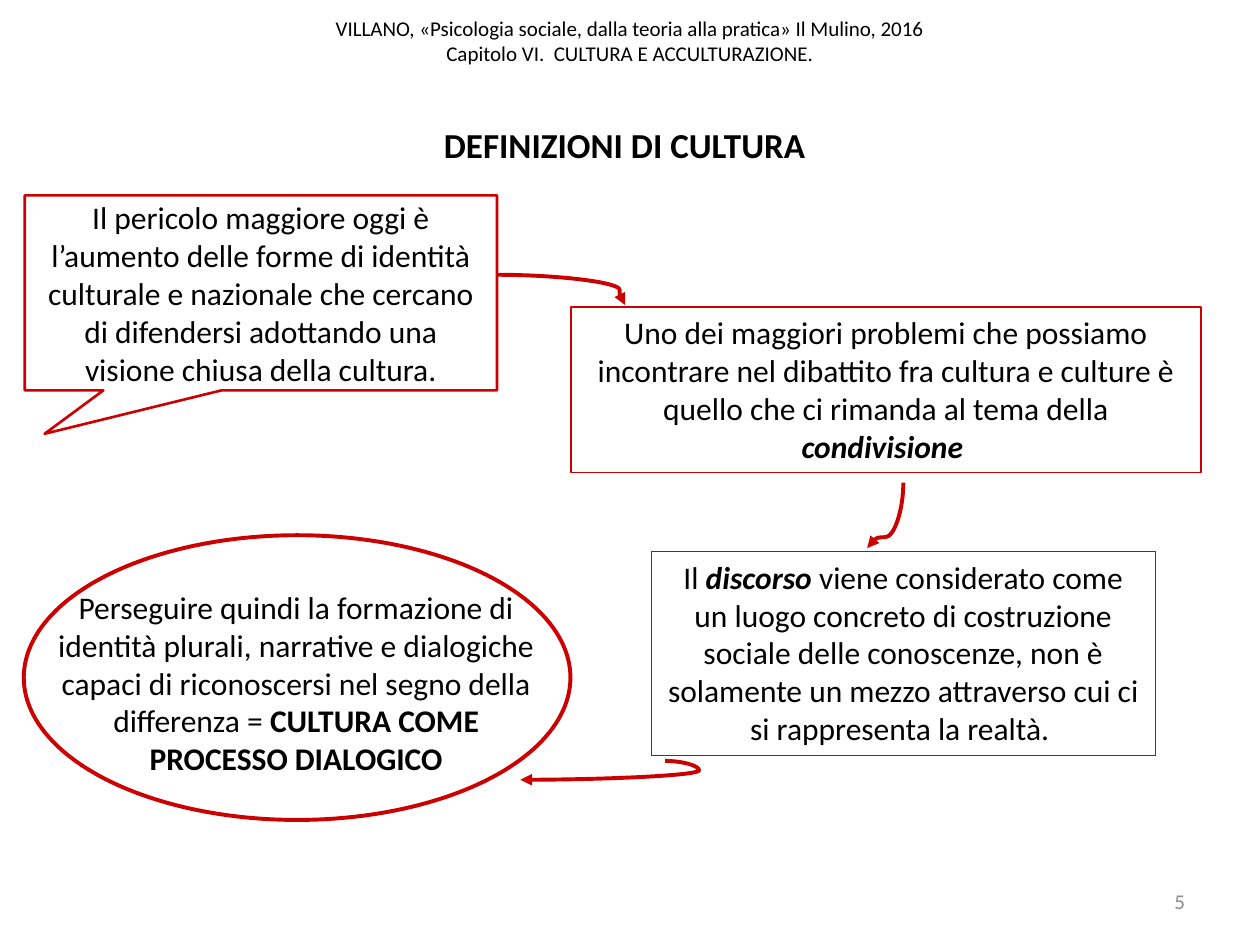
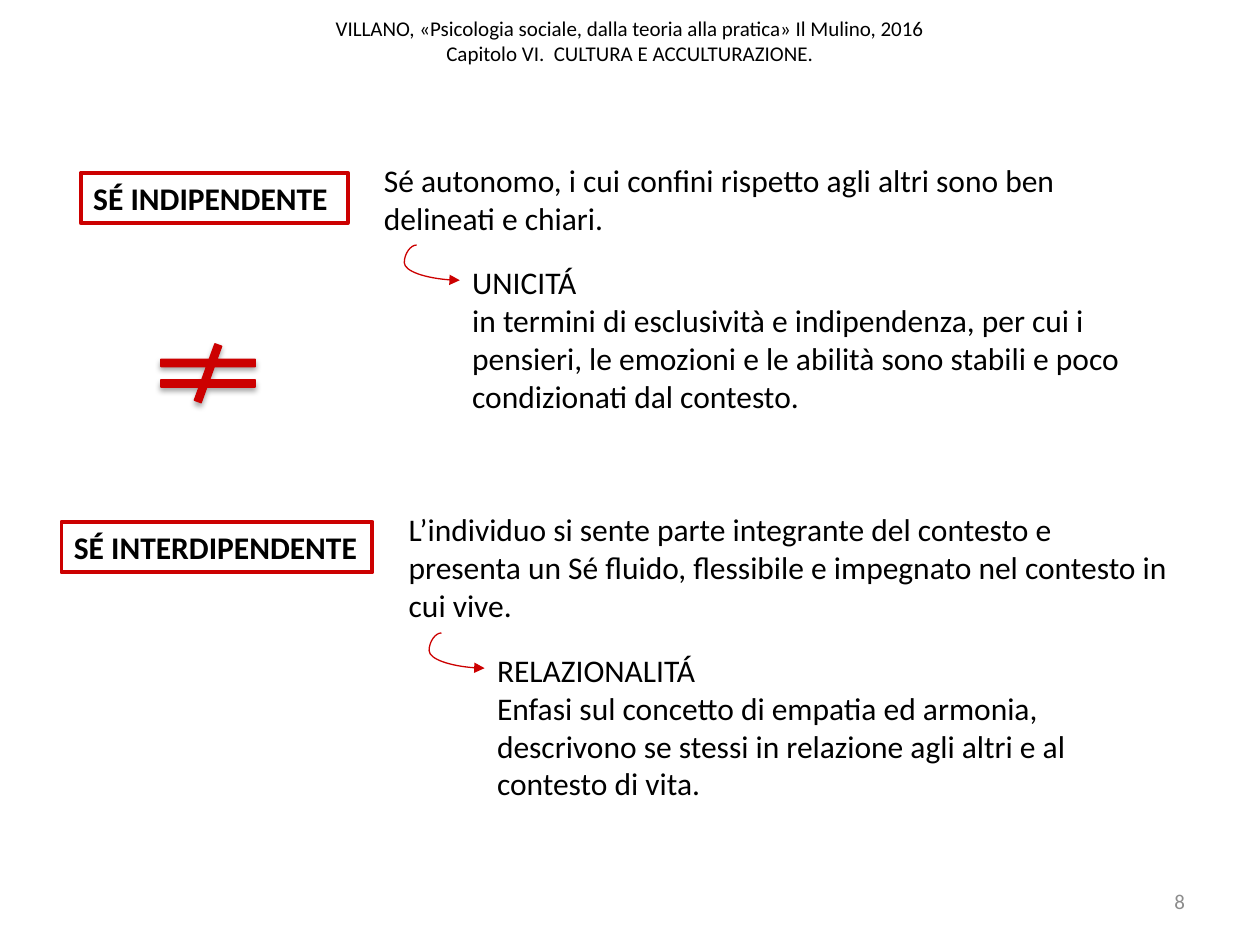
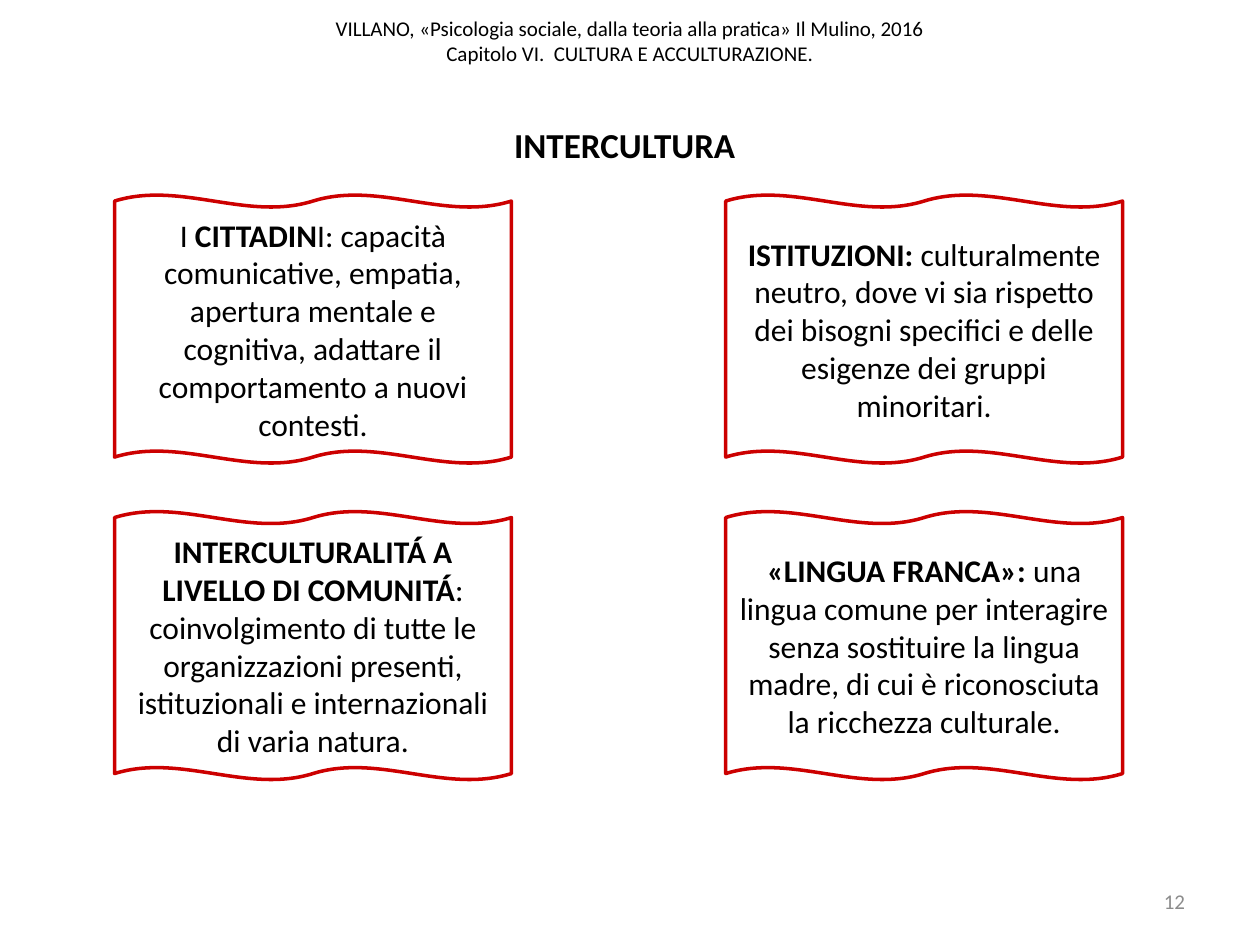
from lxml.etree import SubElement
from pptx import Presentation
from pptx.dml.color import RGBColor
from pptx.enum.shapes import MSO_CONNECTOR as Connector, MSO_SHAPE as Shape
from pptx.enum.text import MSO_ANCHOR as Anchor, MSO_AUTO_SIZE as AutoSize, PP_ALIGN as Align
from pptx.oxml.ns import qn
from pptx.util import Cm, Pt

RED, BLACK, GREY = "CC0000", "000000", "8C8C8C"
FONT = "Calibri"
SMALL_SIZE, BODY_SIZE, TITLE_SIZE = 12, 18, 20
THIN, MEDIUM, WAVY, THICK = 0.75, 1.5, 2, 2.25
TITLE_ONLY, BLANK = 5, 6

SLIDE_WIDTH, SLIDE_HEIGHT = 25.4, 19.05
HEADER_BOX = (0, -0.28, SLIDE_WIDTH, 2.21)
TITLE_BOX = (4.29, 2.36, 16.61, 1.12)
NUMBER_BOX = (18.21, 17.65, 5.93, 1.02)
MAP_BOX = (0.48, 3.94, 23.73, 12.6)
INDEPENDENT_BOX = (1.63, 3.12, 22.09, 5.39)
INTERDEPENDENT_BOX = (1.24, 10.16, 22.59, 6.17)
NOT_EQUAL_BOX = (2.9, 6.93, 2.59, 1.19)
CARDS_BOX = (2.31, 3.93, 20.32, 11.79)

HEADER = ("VILLANO, «Psicologia sociale, dalla teoria alla pratica» Il Mulino, 2016\n"
          "Capitolo VI.  CULTURA E ACCULTURAZIONE.")


def color(hex_value):
    return RGBColor.from_string(hex_value)


def lengths(values):
    return [Cm(value) for value in values]


def inside(box, left, top, *size):
    return box[0] + left, box[1] + top, *size


def write(shape, paragraphs, size=BODY_SIZE, align=Align.CENTER, anchor=Anchor.TOP,
          ink=BLACK, wrap=True, grow=False):
    frame = shape.text_frame
    frame.word_wrap = wrap
    frame.vertical_anchor = anchor
    frame.auto_size = AutoSize.SHAPE_TO_FIT_TEXT if grow else AutoSize.NONE
    for index, runs in enumerate(paragraphs):
        paragraph = frame.add_paragraph() if index else frame.paragraphs[0]
        paragraph.alignment = align
        for text, style in runs:
            for line_index, line in enumerate(text.split("\n")):
                if line_index:
                    paragraph.add_line_break()
                run = paragraph.add_run()
                run.text = line
                run.font.name = FONT
                run.font.size = Pt(size)
                run.font.bold = "b" in style
                run.font.italic = "i" in style
                run.font.color.rgb = color(ink)


def add_text(slide, box, paragraphs, **options):
    shape = slide.shapes.add_textbox(*lengths(box))
    write(shape, paragraphs, **options)
    return shape


def add_outline(slide, kind, box, weight, paragraphs=(), adjustments=(), **options):
    shape = slide.shapes.add_shape(kind, *lengths(box))
    shape.shadow.inherit = False
    shape.fill.background()
    shape.line.color.rgb = color(RED)
    shape.line.width = Pt(weight)
    for index, value in enumerate(adjustments):
        shape.adjustments[index] = value
    if paragraphs:
        write(shape, paragraphs, **options)
    return shape


def quarter_turn(start, end):
    middle_x, middle_y = (start[0] + end[0]) / 2, (start[1] + end[1]) / 2
    half_length, half_depth = (end[1] - start[1]) / 2, (start[0] - end[0]) / 2
    return ((middle_x - half_length, middle_y - half_depth),
            (middle_x + half_length, middle_y + half_depth))


def add_curved_arrow(slide, start, end, weight, bend, turned=False):
    if turned:
        start, end = quarter_turn(start, end)
    arrow = slide.shapes.add_connector(Connector.CURVE, *lengths(start + end))
    arrow.line.color.rgb = color(RED)
    arrow.line.width = Pt(weight)
    properties = arrow.element.spPr
    if turned:
        properties.find(qn("a:xfrm")).set("rot", "5400000")
    guides = properties.find(qn("a:prstGeom")).find(qn("a:avLst"))
    SubElement(guides, qn("a:gd"), name="adj1", fmla=f"val {round(bend * 100000)}")
    SubElement(properties.find(qn("a:ln")), qn("a:tailEnd"), type="triangle")
    SubElement(properties, qn("a:effectLst"))


def move_header_to_master(presentation, slide):
    header = add_text(slide, HEADER_BOX, [[(HEADER, "")]], size=SMALL_SIZE,
                      anchor=Anchor.MIDDLE)
    presentation.slide_master.shapes.element.append(header.element)


def new_slide(presentation, number, title=None):
    layout = presentation.slide_layouts[TITLE_ONLY if title else BLANK]
    slide = presentation.slides.add_slide(layout)
    if title:
        heading = slide.shapes.title
        heading.left, heading.top, heading.width, heading.height = lengths(TITLE_BOX)
        write(heading, [[(title, "b")]], size=TITLE_SIZE, grow=True)
    add_text(slide, NUMBER_BOX, [[(number, "")]], size=SMALL_SIZE, align=Align.RIGHT,
             anchor=Anchor.MIDDLE, ink=GREY)
    return slide


def add_culture_map(slide, box):
    danger = [("Il pericolo maggiore oggi è l’aumento delle forme di identità culturale e "
               "nazionale che cercano di difendersi adottando una visione chiusa della "
               "cultura.", "")]
    sharing = [("Uno dei maggiori problemi che possiamo incontrare nel dibattito fra cultura "
                "e culture è quello che ci rimanda al tema della ", ""),
               ("condivisione ", "bi")]
    discourse = [("Il ", ""),
                 ("discorso", "bi"),
                 (" viene considerato come un luogo concreto di costruzione sociale delle "
                  "conoscenze, non è solamente un mezzo attraverso cui ci si rappresenta "
                  "la realtà. ", "")]
    dialogue = [("Perseguire quindi la formazione di identità plurali, narrative e dialogiche "
                 "capaci di riconoscersi nel segno della differenza = ", ""),
                ("CULTURA COME PROCESSO DIALOGICO", "b")]

    add_outline(slide, Shape.RECTANGULAR_CALLOUT, inside(box, 0.02, 0, 9.52, 3.93), MEDIUM,
                [danger], adjustments=(-0.458, 0.723), anchor=Anchor.MIDDLE)
    for runs, place in (
        (sharing, (11.03, 2.25, 12.7, 3.33)),
        (discourse, (12.65, 7.18, 10.16, 4.11)),
    ):
        add_outline(slide, Shape.RECTANGLE, inside(box, *place), THIN, [runs], grow=True)
    add_text(slide, inside(box, 0.17, 7.79, 10.64, 4.88), [dialogue], grow=True)
    add_outline(slide, Shape.OVAL, inside(box, 0, 6.85, 11.02, 5.74), THICK)

    for start, end, bend, turned in (
        ((9.53, 1.6), (12.12, 2.21), 0.959, False),
        ((17.73, 5.79), (17, 7.11), 0.834, True),
        ((12.93, 11.4), (10.01, 11.78), -0.235, False),
    ):
        add_curved_arrow(slide, inside(box, *start), inside(box, *end), THICK, bend, turned)


def add_self_panel(slide, box, label, label_width, definition, detail, detail_width,
                   wrap_label=True):
    label_drop, label_height, column_gap = 0.36, 1.02, 0.48
    detail_indent, detail_height, row_gap = 1.78, 3.33, 0.26
    arrow_width, arrow_rise, arrow_drop = 0.87, 0.24, 0.47

    left, top, width, height = box
    definition_left = left + label_width + column_gap
    definition_width = left + width - definition_left
    definition_height = height - detail_height - row_gap
    detail_left = definition_left + detail_indent
    detail_top = top + height - detail_height

    add_outline(slide, Shape.RECTANGLE, (left, top + label_drop, label_width, label_height),
                THICK, [[(label, "b")]], align=Align.LEFT, wrap=wrap_label, grow=True)
    for lines, place in (
        ([definition], (definition_left, top, definition_width, definition_height)),
        (detail, (detail_left, detail_top, detail_width, detail_height)),
    ):
        add_text(slide, place, [[(line, "")] for line in lines], align=Align.LEFT, grow=True)
    add_curved_arrow(slide, (detail_left - arrow_width, detail_top - arrow_rise),
                     (detail_left, detail_top + arrow_drop), THIN, -0.287)


def add_not_equal(slide, box):
    sign = add_outline(slide, Shape.MATH_NOT_EQUAL, box, THIN, adjustments=(0.124, 66, 0.223))
    sign.fill.solid()
    sign.fill.fore_color.rgb = color(RED)
    effects = sign.element.spPr.find(qn("a:effectLst"))
    shadow = SubElement(effects, qn("a:outerShdw"), blurRad="40000", dist="23000",
                        dir="5400000", rotWithShape="0")
    tint = SubElement(shadow, qn("a:srgbClr"), val=BLACK)
    SubElement(tint, qn("a:alpha"), val="35000")


def add_card_grid(slide, box, cards, columns=2):
    card_width, card_height = 8, 5.41
    column_step = box[2] - card_width
    row_step = box[3] - card_height
    for index, paragraphs in enumerate(cards):
        row, column = divmod(index, columns)
        place = inside(box, column * column_step, row * row_step, card_width, card_height)
        add_outline(slide, Shape.DOUBLE_WAVE, place, WAVY, paragraphs,
                    adjustments=(0.023, 0), anchor=Anchor.MIDDLE)


def build_definitions(presentation):
    slide = new_slide(presentation, "5", "DEFINIZIONI DI CULTURA")
    move_header_to_master(presentation, slide)
    add_culture_map(slide, MAP_BOX)


def build_selves(presentation):
    slide = new_slide(presentation, "8")
    add_self_panel(
        slide, INDEPENDENT_BOX, label="SÉ INDIPENDENTE", label_width=5.38,
        definition="Sé autonomo, i cui confini rispetto agli altri sono ben delineati e chiari.",
        detail=["UNICITÁ",
                "in termini di esclusività e indipendenza, per cui i pensieri, le emozioni e "
                "le abilità sono stabili e poco condizionati dal contesto."],
        detail_width=14.94)
    add_not_equal(slide, NOT_EQUAL_BOX)
    add_self_panel(
        slide, INTERDEPENDENT_BOX, label="SÉ INTERDIPENDENTE", label_width=6.27,
        definition="L’individuo si sente parte integrante del contesto e presenta un Sé "
                   "fluido, flessibile e impegnato nel contesto in cui vive.",
        detail=["RELAZIONALITÁ",
                "Enfasi sul concetto di empatia ed armonia, descrivono se stessi in "
                "relazione agli altri e al contesto di vita."],
        detail_width=13.03, wrap_label=False)


def build_interculture(presentation):
    citizens = [[("I ", ""), ("CITTADIN", "b"),
                 ("I: capacità comunicative, empatia, apertura mentale e cognitiva, "
                  "adattare il comportamento a nuovi contesti.", "")]]
    institutions = [[("ISTITUZIONI: ", "b"),
                     ("culturalmente neutro, dove vi sia rispetto", "")],
                    [("dei bisogni specifici e delle esigenze dei gruppi minoritari.", "")]]
    community = [[("INTERCULTURALITÁ A LIVELLO DI COMUNITÁ", "b"),
                  (": coinvolgimento di tutte le organizzazioni presenti, istituzionali e "
                   "internazionali di varia natura.", "")]]
    common_language = [[("«LINGUA FRANCA»: ", "b"),
                        ("una lingua comune per interagire senza sostituire la lingua "
                         "madre, di cui è riconosciuta la ricchezza culturale.", "")]]
    slide = new_slide(presentation, "12", "INTERCULTURA")
    add_card_grid(slide, CARDS_BOX, [citizens, institutions, community, common_language])


def main():
    presentation = Presentation()
    presentation.slide_width = Cm(SLIDE_WIDTH)
    presentation.slide_height = Cm(SLIDE_HEIGHT)
    for build in (build_definitions, build_selves, build_interculture):
        build(presentation)
    presentation.save("out.pptx")


if __name__ == "__main__":
    main()
